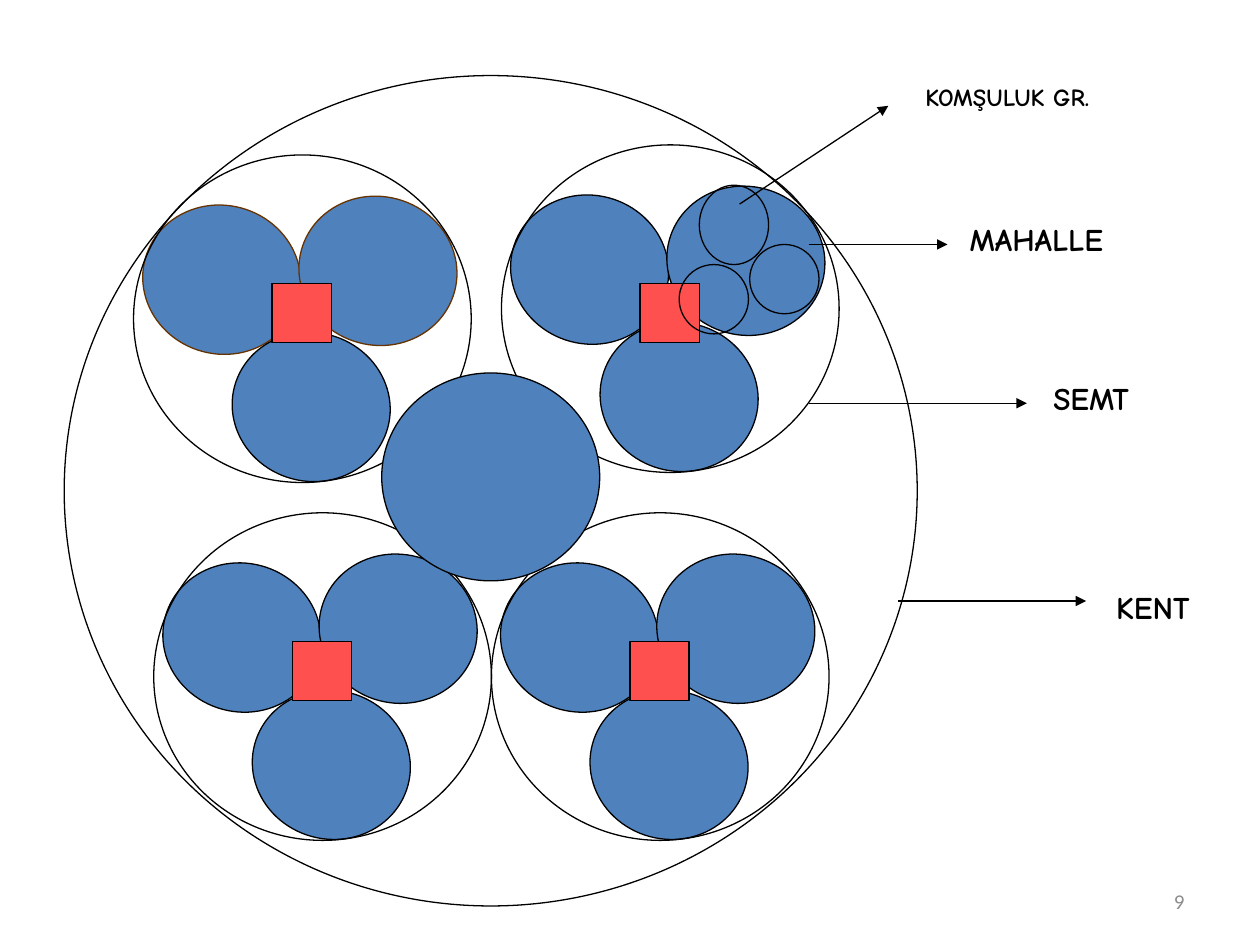
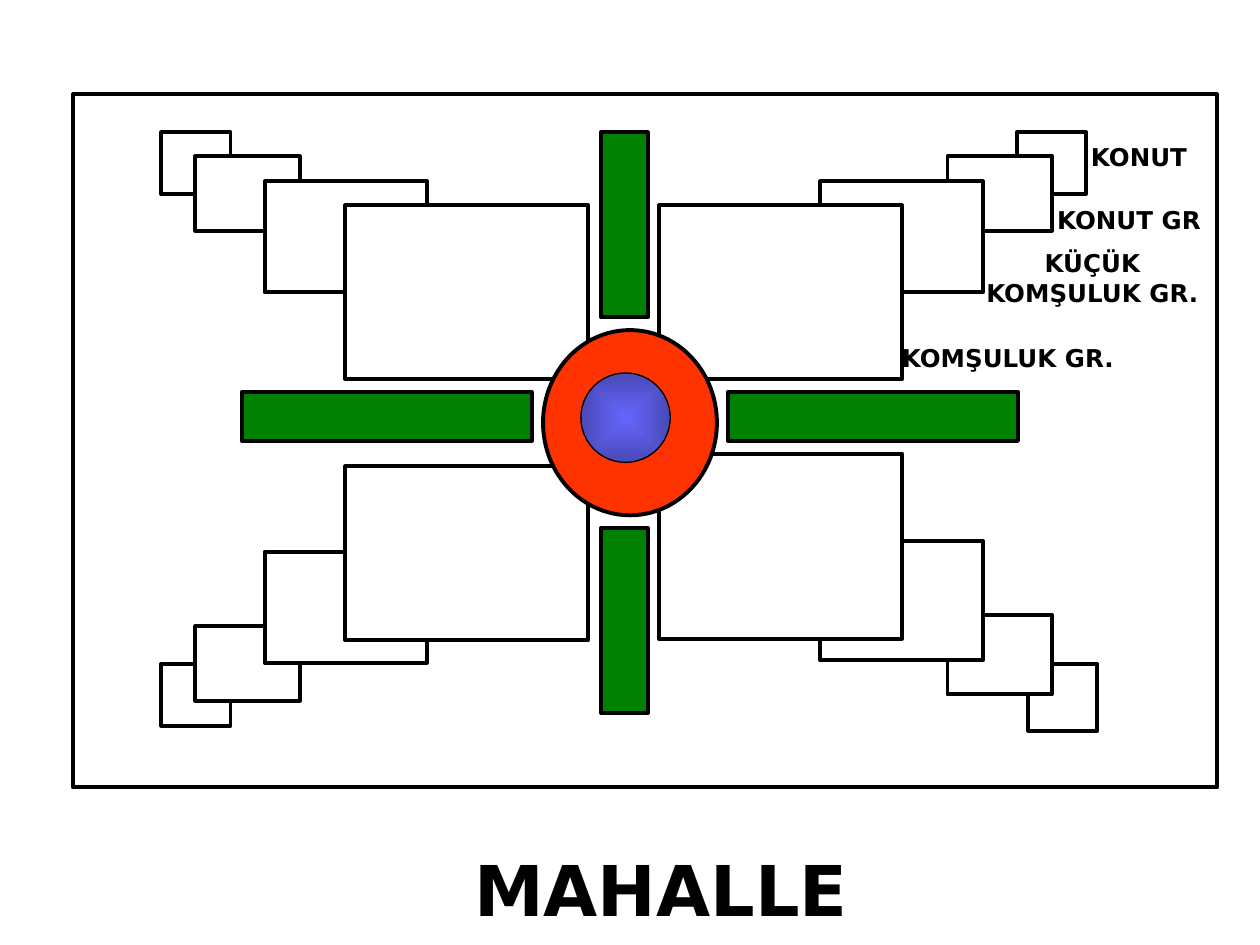
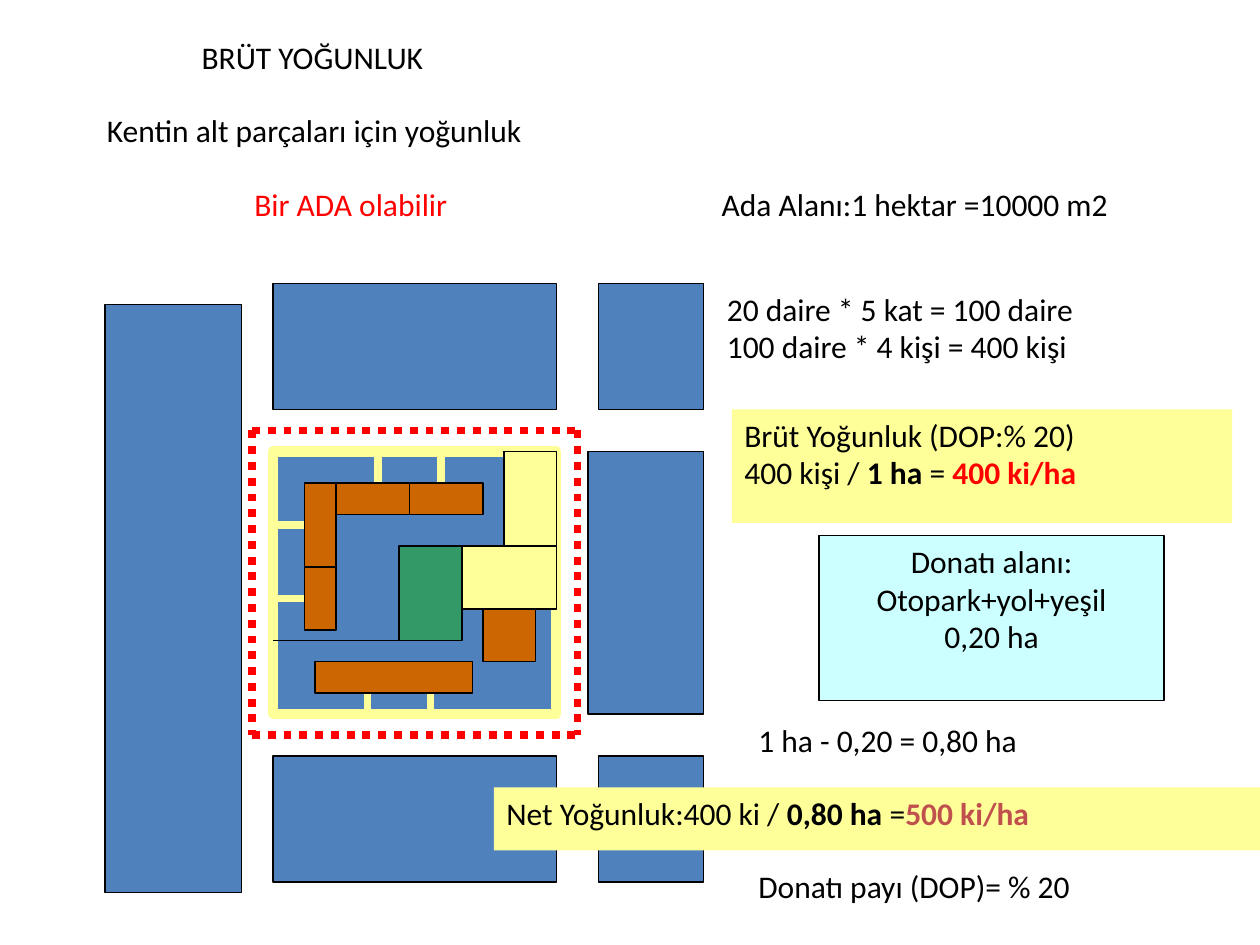
import pptx
import pptx.util
import pptx.dml.color
import pptx.enum.dml
import pptx.enum.shapes
import pptx.enum.text
import pptx.oxml
import pptx.oxml.ns

Inches = pptx.util.Inches
RGB = pptx.dml.color.RGBColor
KIND = pptx.enum.shapes.MSO_SHAPE
ALIGN = pptx.enum.text.PP_ALIGN
ANCHOR = pptx.enum.text.MSO_ANCHOR
DOTS = pptx.enum.dml.MSO_LINE.ROUND_DOT
OVAL, RECT = KIND.OVAL, KIND.RECTANGLE

# Colours
BLACK = RGB(0x00, 0x00, 0x00)
WHITE = RGB(0xFF, 0xFF, 0xFF)
GRAY = RGB(0x8C, 0x8C, 0x8C)
BLUE = RGB(0x4F, 0x81, 0xBD)
BROWN = RGB(0x66, 0x33, 0x00)
CORAL = RGB(0xFF, 0x50, 0x50)
FLAME = RGB(0xFF, 0x33, 0x00)
LEAF = RGB(0x00, 0x80, 0x00)
GLOW = RGB(0x66, 0x66, 0xFF)
DUSK = RGB(0x49, 0x49, 0xB6)
CREAM = RGB(0xFF, 0xFF, 0x99)
RUST = RGB(0xCC, 0x66, 0x00)
PARK = RGB(0x33, 0x99, 0x66)
AQUA = RGB(0xCC, 0xFF, 0xFF)
RED = RGB(0xFF, 0x00, 0x00)
BRICK = RGB(0xC0, 0x50, 0x4D)

# Text styles
COMIC = {"name": "Comic Neue", "size": 18, "bold": True}
DEJA = {"name": "DejaVu Sans", "size": 14, "bold": True}
PLAIN = {"name": "Calibri", "size": 18, "bold": False}
STRONG = {"bold": True}

# City: each district has left, top, top of its square, rim of its upper wards
DISTRICTS = [
    (1.22, 4.07, 5.09, BLACK),
    (1.06, 1.23, 2.25, BROWN),
    (3.98, 1.15, 2.25, BLACK),
    (3.9, 4.07, 5.09, BLACK),
]
WARDS = [(0.07, 0.4), (1.31, 0.33), (0.78, 1.41)]
CELLS = [(5.95, 1.94, 0.55, 0.55), (5.39, 2.1, 0.55, 0.55), (5.55, 1.47, 0.55, 0.63)]
ARROWS = [
    (6.42, 1.94, 7.52, 1.94), (6.42, 3.2, 8.15, 3.2),
    (7.13, 4.77, 8.62, 4.77), (5.87, 1.62, 7.05, 0.84),
]
LEVELS = [
    ("MAHALLE", (7.44, 1.7, 1.57, 0.4), 18),
    ("SEMT", (8.15, 2.96, 1.02, 0.4), 18),
    ("KENT", (8.54, 4.62, 1.22, 0.4), 18),
    ("KOMŞULUK GR.", (6.97, 0.6, 2.05, 0.33), 14),
]

# Neighbourhood: four stacks of homes, mirrored from left to right
MIRROR = 9.9
LEFTS = [1.28, 1.55, 2.1, 2.74]
WIDTHS = [0.55, 0.83, 1.29, 1.93]
LOW = [0.49, 0.59, 0.88, 1.38]
TALL = [0.53, 0.63, 0.95, 1.47]
STACKS = [  # on the right, tops, heights, shift of the outer home
    (False, [1.05, 1.24, 1.44, 1.63], LOW, 0),
    (True, [1.05, 1.24, 1.44, 1.63], LOW, 0),
    (False, [5.27, 4.97, 4.38, 3.7], LOW, 0),
    (True, [5.27, 4.88, 4.29, 3.6], TALL, 0.09),
]
GREENS = [
    (5.78, 3.11, 2.3, 0.39), (1.92, 3.11, 2.3, 0.39),
    (4.77, 1.05, 0.37, 1.47), (4.77, 4.19, 0.37, 1.47),
]
HOMES = [
    ("KONUT", (8.5, 1.08, 1.08, 0.33)),
    ("KONUT GR", (8.25, 1.58, 1.42, 0.33)),
    ("KÜÇÜK KOMŞULUK GR.", (7.67, 1.92, 2, 0.57)),
    ("KOMŞULUK GR.", (6.75, 2.67, 2.5, 0.33)),
]

# Density plan, in cells of a twelfth of an inch
UNIT = 1 / 12
BLOCKS = [
    (56, 43, 11, 25), (26, 72, 27, 12), (57, 72, 10, 12),
    (10, 29, 13, 56), (26, 27, 27, 12), (57, 27, 10, 12),
]
ISLAND = (26, 43, 27, 25)
PLOTS = [
    (RUST, (32, 46, 7, 3)), (RUST, (39, 46, 7, 3)),
    (RUST, (29, 46, 3, 8)), (RUST, (29, 54, 3, 6)),
    (RUST, (30, 63, 15, 3)), (CREAM, (44, 52, 9, 6)),
    (PARK, (38, 52, 6, 9)), (CREAM, (48, 43, 5, 9)),
    (RUST, (46, 58, 5, 5)),
]
WALKS = [
    (42, 43, 42, 46), (36, 43, 36, 46), (26, 50, 29, 50),
    (26, 57, 29, 57), (41, 66, 41, 68), (35, 66, 35, 68),
]
BOUNDS = [
    (24, 41, 24, 70), (24, 41, 55, 41), (55, 41, 55, 70), (24, 70, 55, 70),
]
EDGES = [(48, 43, 48, 52), (34, 61, 26, 61), (34, 61, 44, 61)]
NOTES = [
    ((0.75, 0.83, 4.69, 0.5), ["Kentin alt parçaları için yoğunluk"], BLACK),
    ((1.92, 1.42, 2.48, 0.5), ["Bir ADA olabilir"], RED),
    ((5.63, 1.42, 4.37, 0.5), ["Ada Alanı:1 hektar =10000 m2"], BLACK),
    ((5.67, 2.25, 4.08, 0.9),
     ["20 daire * 5 kat = 100 daire", "100 daire * 4 kişi = 400 kişi"], BLACK),
    ((5.92, 5.67, 3.13, 0.5), ["1 ha - 0,20 = 0,80 ha"], BLACK),
    ((5.92, 6.83, 3.75, 0.5), ["Donatı payı (DOP)= % 20"], BLACK),
]
PANELS = [  # place, fill, line, alignment, text
    ((5.81, 3.25, 3.97, 0.9), CREAM, None, ALIGN.LEFT,
     ["Brüt Yoğunluk (DOP:% 20)",
      [("400 kişi / ", {}), ("1 ha", STRONG), (" = ", {}),
       ("400 ki/ha", {"bold": True, "ink": RED})]]),
    ((6.5, 4.25, 2.74, 1.31), AQUA, BLACK, ALIGN.CENTER,
     ["Donatı alanı:", "Otopark+yol+yeşil", "0,20 ha"]),
    ((3.92, 6.25, 6.08, 0.5), CREAM, None, ALIGN.LEFT,
     [[("Net Yoğunluk:400 ki / ", {}), ("0,80 ha", STRONG), (" =", {}),
       ("500 ki/ha", {"bold": True, "ink": BRICK})]]),
]


def scale(cells):
    return [n * UNIT for n in cells]


def put(slide, kind, at, fill=None, line=BLACK, width=0.75):
    shape = slide.shapes.add_shape(kind, *map(Inches, at))
    shape.shadow.inherit = False
    for part, color in ((shape.fill, fill), (shape.line.fill, line)):
        if color is None:
            part.background()
        else:
            part.solid()
            part.fore_color.rgb = color
    if line is not None:
        shape.line.width = pptx.util.Pt(width)
    return shape


def link(slide, ends, color=BLACK, width=0.75, dash=None, arrow=False):
    line = slide.shapes.add_connector(
        pptx.enum.shapes.MSO_CONNECTOR.STRAIGHT, *map(Inches, ends))
    line.line.color.rgb = color
    line.line.width = pptx.util.Pt(width)
    if dash:
        line.line.dash_style = dash
    tag = pptx.oxml.ns.qn
    if arrow:
        tip = line.get_or_add_ln().makeelement(tag("a:tailEnd"), {"type": "triangle"})
        line.get_or_add_ln().append(tip)
    props = line._element.spPr
    props.append(props.makeelement(tag("a:effectLst"), {}))


def write(shape, paras, look, align=ALIGN.LEFT, ink=BLACK, anchor=ANCHOR.TOP):
    frame = shape.text_frame
    form = {"word_wrap": True, "vertical_anchor": anchor,
            "auto_size": pptx.enum.text.MSO_AUTO_SIZE.NONE}
    for key, val in form.items():
        setattr(frame, key, val)
    for i, runs in enumerate(paras):
        para = frame.add_paragraph() if i else frame.paragraphs[0]
        para.alignment = align
        for text, extra in ([(runs, {})] if isinstance(runs, str) else runs):
            run = para.add_run()
            run.text = text
            style = {**look, "ink": ink, **extra}
            run.font.color.rgb = style.pop("ink")
            style["size"] = pptx.util.Pt(style["size"])
            for key, val in style.items():
                setattr(run.font, key, val)


def label(slide, at, paras, look, **opts):
    write(slide.shapes.add_textbox(*map(Inches, at)), paras, look, **opts)


def head(slide, at, text, look, **opts):
    title = slide.shapes.title
    for key, val in zip(("left", "top", "width", "height"), at):
        setattr(title, key, Inches(val))
    write(title, [text], look, **opts)


def glow(shape):
    shape.fill.gradient()
    for stop, color in zip(shape.fill.gradient_stops, (GLOW, DUSK)):
        stop.color.rgb = color
    grad = shape._element.spPr.find(pptx.oxml.ns.qn("a:gradFill"))
    grad.remove(grad.find(pptx.oxml.ns.qn("a:lin")))
    grad.append(pptx.oxml.parse_xml(
        f'<a:path {pptx.oxml.ns.nsdecls("a")} path="shape">'
        '<a:fillToRect l="50000" t="50000" r="50000" b="50000"/></a:path>'))


def city(slide):
    for left, top, mid, rim in DISTRICTS:
        for (dx, dy), line in zip(WARDS, (rim, rim, BLACK)):
            ward = put(slide, OVAL, (left + dx, top + dy, 1.26, 1.18), BLUE, line)
            ward.rotation = 15
        put(slide, OVAL, (left, top, 2.68, 2.6))
        put(slide, RECT, (left + 1.1, mid, 0.47, 0.47), CORAL)
    put(slide, OVAL, (3.03, 2.96, 1.73, 1.65), BLUE)
    put(slide, OVAL, (0.51, 0.6, 6.77, 6.59))
    for at in CELLS:
        put(slide, OVAL, at)
    for ends in ARROWS:
        link(slide, ends, arrow=True)
    for text, at, size in LEVELS:
        label(slide, at, [text], {**COMIC, "size": size}, align=ALIGN.CENTER)
    label(slide, (7.17, 6.95, 2.33, 0.4), ["9"], {**PLAIN, "size": 12},
          align=ALIGN.RIGHT, ink=GRAY, anchor=ANCHOR.MIDDLE)


def quarter(slide):
    head(slide, (1.08, 6.67, 8.33, 0.77), "MAHALLE", {**DEJA, "size": 40},
         align=ALIGN.CENTER)
    for right, tops, highs, shift in STACKS:
        for i, (x, y, w, h) in enumerate(zip(LEFTS, tops, WIDTHS, highs)):
            left = MIRROR - x - w if right else x
            put(slide, RECT, (left + (0 if i else shift), y, w, h), WHITE, width=2.25)
    put(slide, OVAL, (4.31, 2.62, 1.38, 1.47), FLAME, width=2.25)
    for at in GREENS:
        put(slide, RECT, at, LEAF, width=2.25)
    put(slide, RECT, (0.58, 0.75, 9.08, 5.5), width=2.25)
    for text, at in HOMES:
        label(slide, at, [text], DEJA, align=ALIGN.CENTER)
    glow(put(slide, OVAL, (4.61, 2.96, 0.71, 0.71)))


def density(slide):
    head(slide, (1.5, 0.25, 3.07, 0.5), "BRÜT YOĞUNLUK", PLAIN)
    for cells in BLOCKS:
        put(slide, RECT, scale(cells), BLUE)
    put(slide, RECT, scale(ISLAND), BLUE, CREAM, 5.75)
    for ends in WALKS:
        link(slide, scale(ends), CREAM, 4.5)
    for ends in BOUNDS:
        link(slide, scale(ends), RED, 4.5, DOTS)
    for ends in EDGES:
        link(slide, scale(ends))
    for color, cells in PLOTS:
        put(slide, RECT, scale(cells), color)
    for at, paras, ink in NOTES:
        label(slide, at, paras, PLAIN, ink=ink)
    for at, fill, line, align, paras in PANELS:
        write(put(slide, RECT, at, fill, line, 1), paras, PLAIN, align=align)


def main():
    deck = pptx.Presentation()
    deck.slide_width, deck.slide_height = Inches(10), Inches(7.5)
    for draw, layout in ((city, 6), (quarter, 5), (density, 5)):
        draw(deck.slides.add_slide(deck.slide_layouts[layout]))
    deck.save("out.pptx")


if __name__ == "__main__":
    main()
